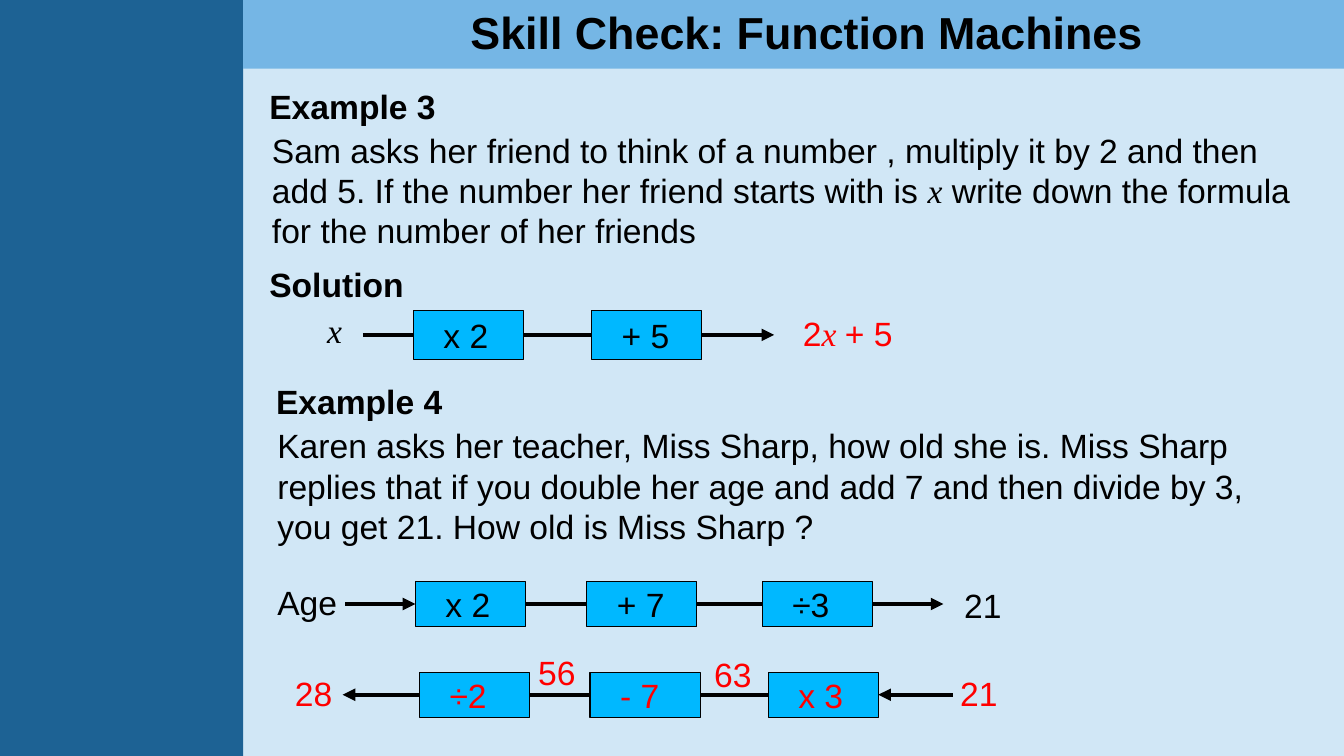
"""Build the function machines skill check slide, placed in percent of slide width and height."""
from lxml import etree
from pptx import Presentation, util as u
from pptx.dml.color import RGBColor
from pptx.enum import shapes, text
from pptx.oxml.ns import qn

SANS, SERIF = "Arial", "Times New Roman"
BLACK, RED = "000000", "FF0000"

prs = Presentation()
prs.slide_width, prs.slide_height = u.Inches(13.33), u.Inches(7.5)
s = prs.slides.add_slide(prs.slide_layouts[6])


def paint(target, color):
    target.solid()
    target.fore_color.rgb = RGBColor.from_string(color)


def place(*shares):
    sides = (prs.slide_width, prs.slide_height) * 2
    return [round(side * share / 100) for side, share in zip(sides, shares)]


paint(s.background.fill, "D1E7F6")
for area, color in [((0, 0, 18.1, 100), "1D6294"), ((18.1, 0, 81.9, 9.1), "75B6E5")]:
    sp = s.shapes.add_shape(shapes.MSO_SHAPE.RECTANGLE, *place(*area))
    sp.shadow.inherit = False
    paint(sp.fill, color)
    sp.line.fill.background()

sam = [
    ("Sam asks her friend to think of a number , multiply it by 2 and then add 5. "
     "If the number her friend starts with is ", SANS),
    ("x", SERIF),
    (" write down the formula for the number of her friends", SANS),
]
karen = ("Karen asks her teacher, Miss Sharp, how old she is. Miss Sharp replies that if you "
         "double her age and add 7 and then divide by 3, you get 21. How old is Miss Sharp ?")
texts = [
    ((31.1, 0, 57.9, 8.5), [("Skill Check: Function Machines", SANS)], 32, BLACK, True),
    ((19.3, 10.7, 20.7, 6.7), [("Example 3", SANS)], 24, BLACK, True),
    ((19.5, 16.5, 78.3, 17.5), sam, 24, BLACK, False),
    ((19.3, 34.3, 13.6, 6.7), [("Solution", SANS)], 24, BLACK, True),
    ((23.6, 40.3, 3.5, 6.7), [("x", SERIF)], 24, BLACK, False),
    ((59, 40.7, 10.7, 6.7), [("2", SANS), ("x ", SERIF), ("+ 5", SANS)], 24, RED, False),
    ((19.8, 49.7, 20.7, 6.7), [("Example 4", SANS)], 24, BLACK, True),
    ((19.9, 55.6, 76.4, 17.5), [(karen, SANS)], 24, BLACK, False),
    ((19.9, 76.3, 7, 6.7), [("Age", SANS)], 24, BLACK, False),
    ((71, 76.7, 7, 6.7), [("21", SANS)], 24, BLACK, False),
    ((21.2, 88.3, 5, 6.7), [("28", SANS)], 24, RED, False),
    ((39.3, 85.6, 5, 6.7), [("56", SANS)], 24, RED, False),
    ((52.4, 85.9, 5, 6.7), [("63", SANS)], 24, RED, False),
    ((70.7, 88.3, 5, 6.7), [("21", SANS)], 24, RED, False),
]
for area, runs, size, color, bold in texts:
    tf = s.shapes.add_textbox(*place(*area)).text_frame
    tf.word_wrap = True
    tf.auto_size = text.MSO_AUTO_SIZE.SHAPE_TO_FIT_TEXT
    p = tf.paragraphs[0]
    p.alignment = text.PP_ALIGN.CENTER if size == 32 else text.PP_ALIGN.LEFT
    p.font.size, p.font.bold = u.Pt(size), bold
    paint(p.font.fill, color)
    for words, face in runs:
        r = p.add_run()
        r.text = words
        font = p.font if len(runs) == 1 else r.font
        font.name, font.italic = face, face == SERIF

machines = [
    (41.1, 6.4, [(30.75, "x 2"), (44, "+ 5")], BLACK, 27, 57.6, {"right"}),
    (76.9, 6, [(30.9, "x 2"), (43.65, "+ 7"), (56.7, "÷3")], BLACK, 25.7, 70.2, {"left", "right"}),
    (88.9, 6, [(31.2, "÷2"), (43.9, "- 7"), (57.15, "x 3")], RED, 70.9, 25.5, {"left", "right"}),
]
for top, height, steps, color, start, end, arrows in machines:
    boxes = []
    for left, label in steps:
        sp = s.shapes.add_shape(shapes.MSO_SHAPE.RECTANGLE, *place(left, top, 8.2, height))
        sp.shadow.inherit = False
        paint(sp.fill, "00B8FF")
        paint(sp.line.fill, BLACK)
        sp.line.width = u.Pt(0.75)
        tf = sp.text_frame
        tf.margin_left, tf.margin_right = place(2.25, 0)[0], 0
        tf.margin_top = tf.margin_bottom = 0
        tf.vertical_anchor = text.MSO_ANCHOR.MIDDLE
        p = tf.paragraphs[0]
        p.text, p.alignment = label, text.PP_ALIGN.LEFT
        p.font.name, p.font.size = SANS, u.Pt(24)
        paint(p.font.fill, color)
        boxes.append(sp)

    backwards = start > end
    flow = boxes[::-1] if backwards else boxes
    entry, leave = (3, 1) if backwards else (1, 3)
    for source, target in zip([None] + flow, flow + [None]):
        ends = place(start, top + height / 2, end, top + height / 2)
        c = s.shapes.add_connector(shapes.MSO_CONNECTOR.STRAIGHT, *ends)
        if source:
            c.begin_connect(source, leave)
        if target:
            c.end_connect(target, entry)
        paint(c.line.fill, BLACK)
        c.line.width = u.Pt(3)
        side = "left" if source is None else "right" if target is None else None
        if side in arrows:
            etree.SubElement(c.line._get_or_add_ln(), qn("a:tailEnd"), type="triangle")
        etree.SubElement(c._element.spPr, qn("a:effectLst"))

prs.save("out.pptx")
